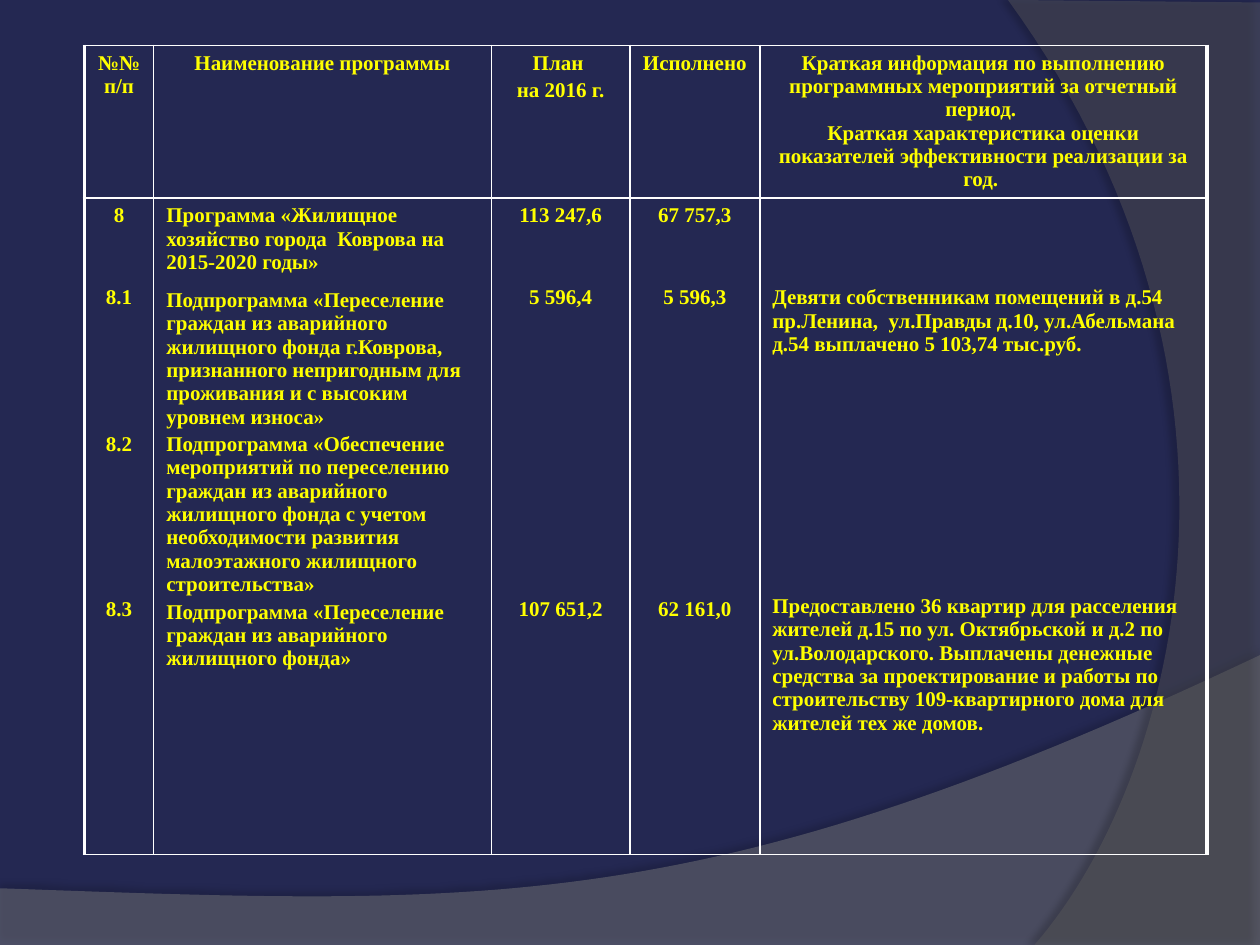
"""Build the slide with the results table of the city housing programme."""
from lxml import etree
from pptx import Presentation, util as u
from pptx.dml.color import RGBColor
from pptx.enum import text as t
from pptx.oxml import ns, parse_xml

A = ns.nsdecls("a")
CENTER, LEFT = t.PP_ALIGN.CENTER, t.PP_ALIGN.LEFT


def paint(color_format, hex_color):
    color_format.rgb = RGBColor.from_string(hex_color)


def write(paragraph, content, align=LEFT, before=0, size=12, color="FFFF00"):
    paragraph.alignment = align
    paragraph.space_before = u.Pt(before)
    run = paragraph.add_run()
    run.text = content
    run.font.name = "Times New Roman"
    run.font.size = u.Pt(size)
    run.font.bold = True
    paint(run.font.color, color)


deck = Presentation()
deck.slide_width, deck.slide_height = u.Inches(10), u.Inches(7.5)
W, H = deck.slide_width, deck.slide_height
slide = deck.slides.add_slide(deck.slide_layouts[6])
slide.background.fill.solid()
paint(slide.background.fill.fore_color, "242852")

waves = [
    dict(curve=[(10, 5.2), (5.59, 7.29), (3.91, 7.19), (0, 7.05)],
         corners=[(0, 7.5), (10, 7.5)],
         color="7F7F7F", alpha=45, shade=35, distance=3.5, direction=270),
    dict(curve=[(8.21, 7.5), (9.35, 6.19), (10.18, 3), (8, 0)],
         corners=[(10, 0.02), (10, 7.5)],
         color="5E5E5E", alpha=40, shade=45, distance=4, direction=180),
]
STEPS = 60
for wave in waves:
    outline = []
    for step in range(STEPS + 1):
        s = step / STEPS
        weights = ((1 - s) ** 3, 3 * s * (1 - s) ** 2, 3 * s ** 2 * (1 - s), s ** 3)
        outline.append([sum(w * point[axis] for w, point in zip(weights, wave["curve"]))
                        for axis in (0, 1)])
    outline = [(u.Inches(x), u.Inches(y)) for x, y in outline + wave["corners"]]
    builder = slide.shapes.build_freeform(*outline[0])
    builder.add_line_segments(outline[1:], close=True)
    band = builder.convert_to_shape()
    band.line.fill.background()
    band.fill.solid()
    paint(band.fill.fore_color, wave["color"])
    tint = band.fill._xPr.find(".//" + ns.qn("a:srgbClr"))
    etree.SubElement(tint, ns.qn("a:alpha"), val=str(wave["alpha"] * 1000))
    band._element.spPr.append(parse_xml(
        f'<a:effectLst {A}><a:outerShdw blurRad="{u.Pt(4)}" dist="{u.Pt(wave["distance"])}" '
        f'dir="{wave["direction"] * 60000}" algn="ctr" rotWithShape="0"><a:srgbClr val="000000">'
        f'<a:alpha val="{wave["shade"] * 1000}"/></a:srgbClr></a:outerShdw></a:effectLst>'))

col_shares = [0.055, 0.268, 0.11, 0.103, 0.355]
row_shares = [0.161, 0.695]
header = [
    [("№№ п/п", 0)],
    [("Наименование программы", 0)],
    [("План ", 0), ("на 2016 г.", 2.4)],
    [("Исполнено", 0)],
    [("Краткая информация по выполнению программных мероприятий за отчетный период. ", 0),
     ("Краткая характеристика оценки показателей эффективности реализации за год. ", 0)],
]
results = [
    [("8", 0), ("8.1", 33.5), ("8.2", 70.7), ("8.3", 81)],
    [("Программа «Жилищное хозяйство города  Коврова на 2015-2020 годы»", 0),
     ("Подпрограмма «Переселение граждан из аварийного жилищного фонда г.Коврова, "
      "признанного непригодным для проживания и с высоким уровнем износа»", 8.4),
     ("Подпрограмма «Обеспечение мероприятий по переселению граждан из аварийного "
      "жилищного фонда с учетом необходимости развития малоэтажного жилищного "
      "строительства»", 2.4),
     ("Подпрограмма «Переселение граждан из аварийного жилищного фонда»", 2.4)],
    [("113 247,6", 0), ("5 596,4", 33.5), ("107 651,2", 165)],
    [("67 757,3", 0), ("5 596,3", 33.5), ("62 161,0", 165)],
    [("Девяти собственникам помещений в д.54 пр.Ленина,  ул.Правды д.10, "
      "ул.Абельмана д.54 выплачено 5 103,74 тыс.руб.", 0),
     ("Предоставлено 36 квартир для расселения жителей д.15 по ул. Октябрьской и д.2 "
      "по ул.Володарского. Выплачены денежные средства за проектирование и работы по "
      "строительству 109-квартирного дома для жителей тех же домов.", 136.4)],
]
programme = slide.shapes.add_table(
    len(row_shares), len(col_shares), int(W * 0.067), int(H * 0.048),
    int(W * sum(col_shares)), int(H * sum(row_shares))).table
programme.first_row = programme.horz_banding = False
for column, share in zip(programme.columns, col_shares):
    column.width = int(W * share)
for row, share in zip(programme.rows, row_shares):
    row.height = int(H * share)

last = len(col_shares) - 1
for r, entries in enumerate([header, results]):
    for c, entry in enumerate(entries):
        cell = programme.cell(r, c)
        align = LEFT if r and c in (1, last) else CENTER
        for i, (content, before) in enumerate(entry):
            frame = cell.text_frame
            paragraph = frame.paragraphs[0] if i == 0 else frame.add_paragraph()
            write(paragraph, content, align=align, before=before)
        cell.margin_top = u.Inches(0.7 if r and c == last else 0.05)
        borders = {"L": 2.25 if c == 0 else 1, "R": 2.25 if c == last else 1, "T": 1, "B": 1}
        for side, width in borders.items():
            cell._tc.get_or_add_tcPr().append(parse_xml(
                f'<a:ln{side} {A} w="{u.Pt(width)}"><a:solidFill><a:srgbClr val="FFFFFF"/>'
                f'</a:solidFill></a:ln{side}>'))
        cell.fill.background()

deck.save("out.pptx")
